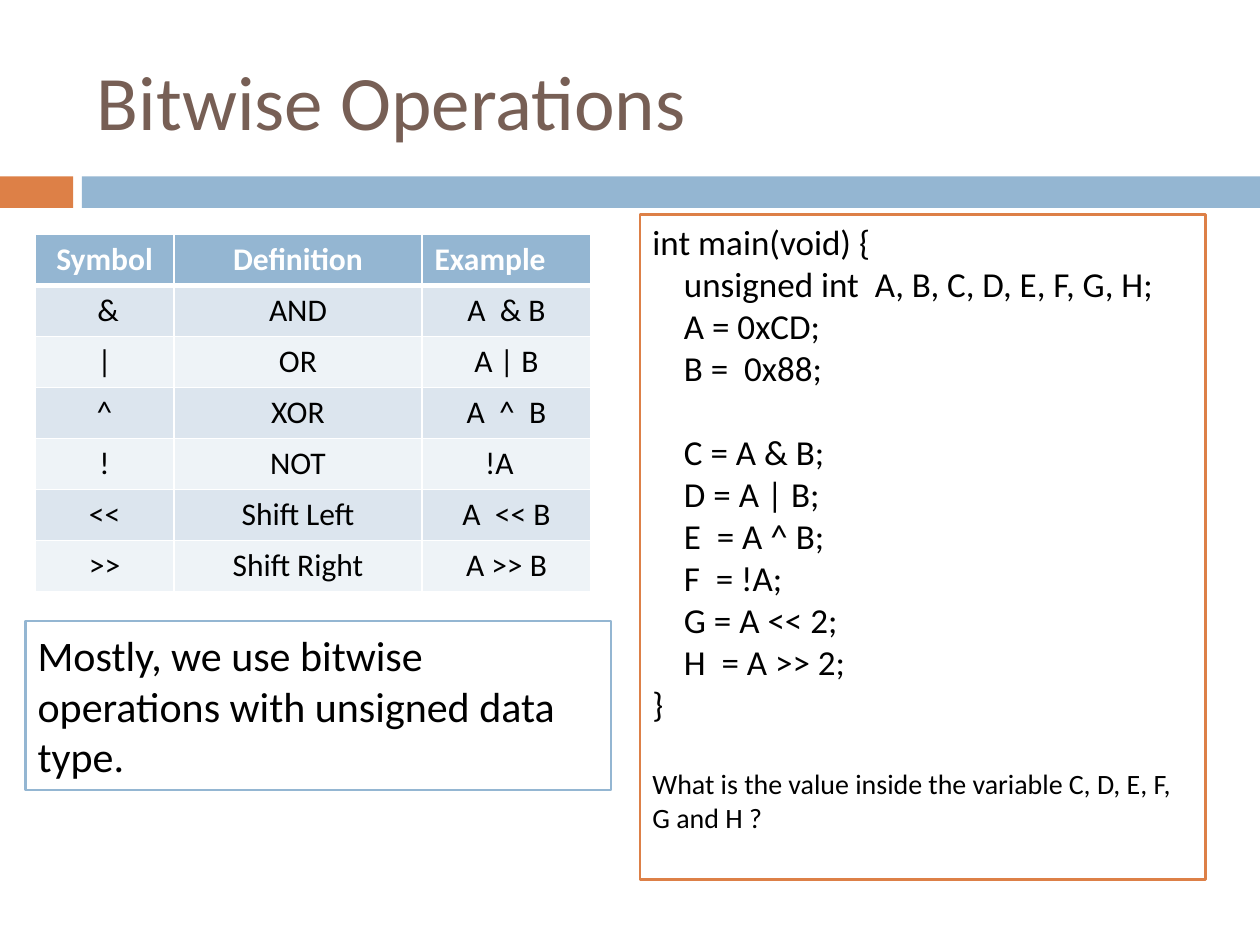
from lxml import etree
from pptx import Presentation
from pptx.dml.color import RGBColor
from pptx.enum.shapes import MSO_SHAPE
from pptx.enum.text import MSO_ANCHOR, PP_ALIGN
from pptx.oxml.ns import qn
from pptx.util import Inches, Pt

RECT = MSO_SHAPE.RECTANGLE
LEFT, CENTER = PP_ALIGN.LEFT, PP_ALIGN.CENTER
TOP, MIDDLE = MSO_ANCHOR.TOP, MSO_ANCHOR.MIDDLE

BLUE, ORANGE, BROWN = "94B6D2", "DD8047", "775F55"
WHITE, BLACK = "FFFFFF", "000000"
BANDS = ("DCE5EE", "EEF3F7")

OPERATORS = [
    ("Symbol", "Definition", "Example"),
    (" &", "AND", "A  & B"),
    ("|", "OR", "A | B"),
    ("^", "XOR", "A  ^  B"),
    ("!", "NOT", "!A  "),
    ("<<", "Shift Left", "A  << B"),
    (">>", "Shift Right", "A >> B"),
]
DECLARATIONS = ["unsigned int  A, B, C, D, E, F, G, H;", "A = 0xCD;", "B =  0x88;"]
OPERATIONS = ["C = A & B;", "D = A | B;", "E  = A ^ B;", "F  = !A;",
              "G = A << 2;", "H  = A >> 2;"]
QUESTION = "What is the value inside the variable C, D, E, F, G and H ?"


def rgb(value):
    return RGBColor.from_string(value)


class SlideBuilder:
    font = "Calibri"

    def __init__(self, slide):
        self.slide = slide

    def paragraph(self, tf, text, size, color=BLACK, align=LEFT, bold=False,
                  indent=0, before=0):
        """Fill the empty first paragraph, or append another one."""
        p = tf.paragraphs[0]
        if p.runs:
            p = tf.add_paragraph()
        p.alignment = align
        p.space_before = Pt(before)
        if indent:
            p._p.get_or_add_pPr().set("marL", str(Inches(indent)))
        r = p.add_run()
        r.text = text
        r.font.name = self.font
        r.font.size = Pt(size)
        r.font.bold = bold
        r.font.color.rgb = rgb(color)

    def box(self, x, y, w, h, fill, line=None, anchor=TOP):
        """Add a rectangle and return its text frame."""
        sp = self.slide.shapes.add_shape(RECT, Inches(x), Inches(y), Inches(w), Inches(h))
        sp.shadow.inherit = False
        sp.fill.solid()
        sp.fill.fore_color.rgb = rgb(fill)
        if line:
            sp.line.color.rgb = rgb(line)
            sp.line.width = Pt(1.5)
        else:
            sp.line.fill.background()
        tf = sp.text_frame
        tf.word_wrap = True
        tf.vertical_anchor = anchor
        return tf

    def title(self, text, x, y, w, h):
        tf = self.slide.shapes.add_textbox(
            Inches(x), Inches(y), Inches(w), Inches(h)).text_frame
        tf.word_wrap = True
        tf.vertical_anchor = MIDDLE
        self.paragraph(tf, text, 44, BROWN)

    def borders(self, cell, bottom):
        tc_pr = cell._tc.get_or_add_tcPr()
        for side, width in (("L", 1), ("R", 1), ("T", 1), ("B", bottom)):
            ln = etree.SubElement(tc_pr, qn(f"a:ln{side}"), w=str(Pt(width)))
            fill = etree.SubElement(ln, qn("a:solidFill"))
            etree.SubElement(fill, qn("a:srgbClr"), val=WHITE)

    def table(self, rows, x, y, col_widths, row_height):
        table = self.slide.shapes.add_table(
            len(rows), len(col_widths), Inches(x), Inches(y),
            Inches(sum(col_widths)), Inches(row_height * len(rows))).table
        for column, width in zip(table.columns, col_widths):
            column.width = Inches(width)
        for i, row in enumerate(rows):
            table.rows[i].height = Inches(row_height)
            header = i == 0
            for j, text in enumerate(row):
                cell = table.cell(i, j)
                self.borders(cell, 3 if header else 1)
                cell.fill.solid()
                cell.fill.fore_color.rgb = rgb(BLUE if header else BANDS[(i - 1) % 2])
                align = LEFT if header and j == 2 else CENTER
                self.paragraph(cell.text_frame, text, 18,
                               WHITE if header else BLACK, align, header)

    def code(self, tf, blocks, size):
        """Write main() with indented blocks, one blank line's height apart."""
        self.paragraph(tf, "int main(void) {", size)
        for b, block in enumerate(blocks):
            for n, text in enumerate(block):
                gap = size * 1.2 if b and not n else 0
                self.paragraph(tf, text, size, indent=0.25, before=gap)
        self.paragraph(tf, "}", size)


def main():
    prs = Presentation()
    prs.slide_width, prs.slide_height = Inches(10), Inches(7.5)
    s = SlideBuilder(prs.slides.add_slide(prs.slide_layouts[6]))

    s.box(0, 1.4, 0.58, 0.25, ORANGE)
    s.box(0.65, 1.4, 9.35, 0.25, BLUE)
    s.title("Bitwise Operations", 0.67, 0.25, 8.92, 1.08)
    s.table(OPERATORS, 0.28, 1.86, (1.1, 1.97, 1.34), 0.405)

    note = s.box(0.2, 4.93, 4.65, 1.34, WHITE, BLUE, MIDDLE)
    s.paragraph(note, "Mostly, we use bitwise operations with unsigned data type.", 24)

    listing = s.box(5.08, 1.7, 4.49, 5.28, WHITE, ORANGE)
    s.code(listing, (DECLARATIONS, OPERATIONS), 20)
    s.paragraph(listing, QUESTION, 16, before=24)

    prs.save("out.pptx")


if __name__ == "__main__":
    main()
